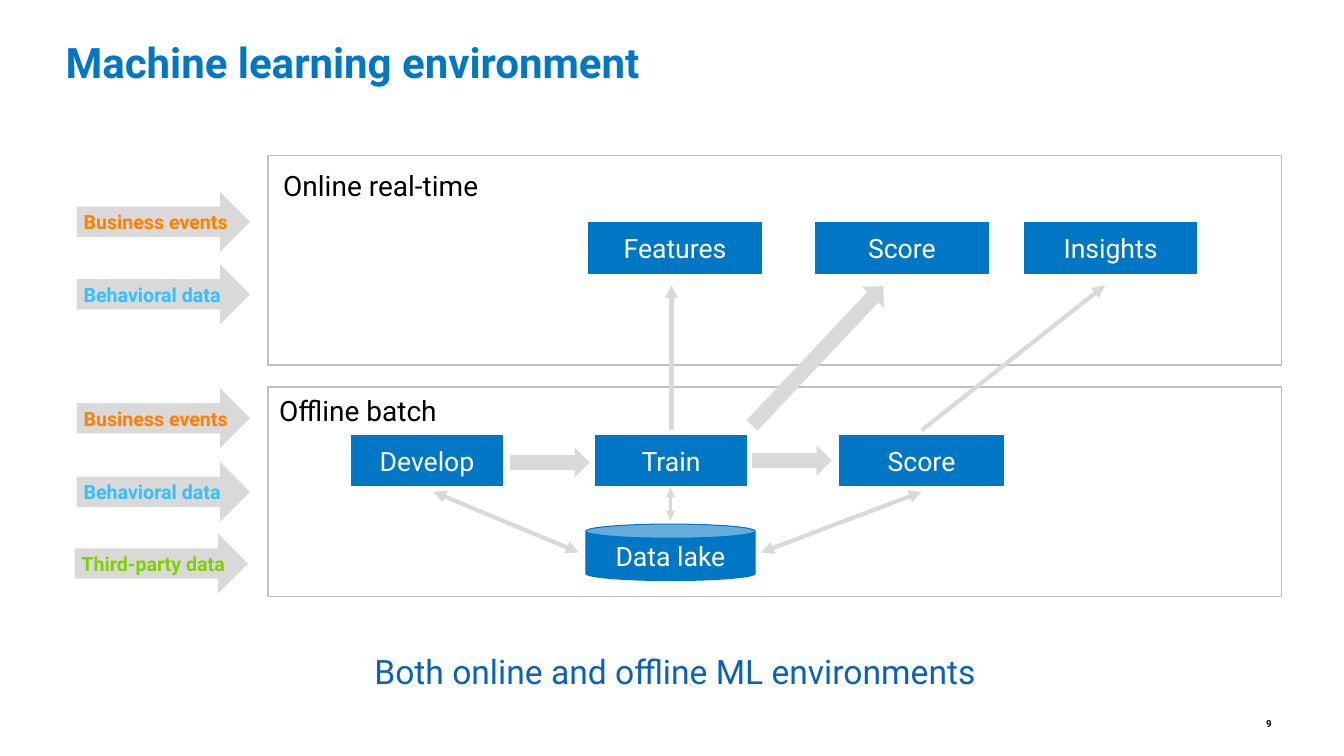
from lxml import etree
from pptx import Presentation
from pptx.dml.color import RGBColor
from pptx.enum.shapes import MSO_CONNECTOR as Link, MSO_SHAPE as Shape
from pptx.enum.text import MSO_ANCHOR as Anchor, PP_ALIGN as Align
from pptx.oxml.ns import qn
from pptx.util import Inches, Pt

# Content
FONT = "Roboto"
BLUE, EDGE, GRAY, FRAME = "0077C5", "0074C1", "D9D9D9", "BFBFBF"
ORANGE, SKY, GREEN = "FF8000", "34BFFF", "7FD000"
TITLE = "Machine learning environment"
FRAMES = [1.54, 3.84]  # top
# text, left, top, width, height, size, colour, bold, alignment
TEXTS = [
    ("Online real-time", 2.71, 1.62, 2.28, 0.44, 20, "000000", False, Align.LEFT),
    ("Offline batch", 2.67, 3.85, 1.86, 0.44, 20, "000000", False, Align.LEFT),
    ("Both online and offline ML environments",
     3.48, 6.41, 6.43, 0.5, 24, "0B61B8", False, Align.CENTER),
    ("9", 12.46, 7.08, 0.39, 0.2, 7, "000000", True, Align.LEFT),
]
# text, left, top, colour
INPUTS = [
    ("Business events", 0.76, 1.9, ORANGE),
    ("Behavioral data", 0.76, 2.62, SKY),
    ("Business events", 0.76, 3.85, ORANGE),
    ("Behavioral data", 0.76, 4.58, SKY),
    ("Third-party data", 0.74, 5.29, GREEN),
]
# row top -> text, left, width
ROWS = {
    2.21: [("Features", 5.84, 1.71), ("Score", 8.09, 1.71), ("Insights", 10.16, 1.71)],
    4.32: [("Develop", 3.49, 1.49), ("Train", 5.91, 1.49), ("Score", 8.33, 1.62)],
}
LAKE = ("Data lake", 5.81, 5.2, 1.68, 0.56)
# from, to, width, arrowhead at both ends
LINES = [
    ((6.66, 4.27), (6.66, 2.83), 3, False),
    ((9.14, 4.27), (10.96, 2.83), 3, False),
    ((4.3, 4.88), (5.74, 5.48), 3, True),
    ((6.65, 4.84), (6.65, 5.16), 2.25, True),
    ((7.55, 5.48), (9.14, 4.88), 3, True),
]
# left, top, width, rotation
FLOWS = [(5.06, 4.44, 0.79, 0), (7.46, 4.42, 0.79, 0), (7.16, 3.38, 1.9, 313.3)]


def rgb(code):
    return RGBColor.from_string(code)


def write(frame, text, size, color, bold=False, align=Align.LEFT):
    frame.text = text
    para = frame.paragraphs[0]
    para.alignment = align
    font = para.font
    font.name, font.size, font.bold = FONT, Pt(size), bold
    font.color.rgb = rgb(color)


def add_text(text, x, y, w, h, size, color, bold, align):
    frame = slide.shapes.add_textbox(*map(Inches, (x, y, w, h))).text_frame
    frame.word_wrap = False
    frame.vertical_anchor = Anchor.MIDDLE
    write(frame, text, size, color, bold, align)


def add_shape(kind, x, y, w, h, fill=None, line=None, width=0.75):
    shape = slide.shapes.add_shape(kind, *map(Inches, (x, y, w, h)))
    shape.shadow.inherit = False
    if fill:
        shape.fill.solid()
        shape.fill.fore_color.rgb = rgb(fill)
    else:
        shape.fill.background()
    if line:
        shape.line.color.rgb = rgb(line)
        shape.line.width = Pt(width)
    else:
        shape.line.fill.background()
    return shape


def add_node(kind, text, x, y, w, h):
    frame = add_shape(kind, x, y, w, h, BLUE, EDGE).text_frame
    frame.vertical_anchor = Anchor.MIDDLE
    write(frame, text, 19, "FFFFFF", align=Align.CENTER)


def add_line(start, end, width, both):
    line = slide.shapes.add_connector(Link.STRAIGHT, *map(Inches, start + end))
    line.line.color.rgb = rgb(GRAY)
    line.line.width = Pt(width)
    props = line._element.spPr
    for tag in ["a:headEnd", "a:tailEnd"] if both else ["a:tailEnd"]:
        etree.SubElement(props.find(qn("a:ln")), qn(tag), type="triangle")
    etree.SubElement(props, qn("a:effectLst"))


deck = Presentation()
deck.slide_width, deck.slide_height = Inches(13.33), Inches(7.5)
slide = deck.slides.add_slide(deck.slide_layouts[5])

# Title
title = slide.shapes.title
title.left, title.top, title.width, title.height = map(Inches, (0.55, 0.34, 12.15, 0.6))
title.text_frame.vertical_anchor = Anchor.MIDDLE
write(title.text_frame, TITLE, 30, BLUE, True)
title.text_frame.paragraphs[0].line_spacing = 0.95

# Environment frames, headings and footer
for top in FRAMES:
    add_shape(Shape.RECTANGLE, 2.66, top, 10.05, 2.08, line=FRAME, width=1)
for item in TEXTS:
    add_text(*item)

# Incoming data
for text, x, y, color in INPUTS:
    add_shape(Shape.RIGHT_ARROW, x, y, 1.72, 0.6, GRAY)
    add_text(text, x - 0.03, y + 0.13, 1.71, 0.34, 14, color, True, Align.LEFT)

# Process steps and data lake
for top, nodes in ROWS.items():
    for text, x, w in nodes:
        add_node(Shape.RECTANGLE, text, x, top, w, 0.5)
add_node(Shape.CAN, *LAKE)

# Thin and block arrows
for item in LINES:
    add_line(*item)
for x, y, w, turn in FLOWS:
    add_shape(Shape.RIGHT_ARROW, x, y, w, 0.3, GRAY).rotation = turn

deck.save("out.pptx")
